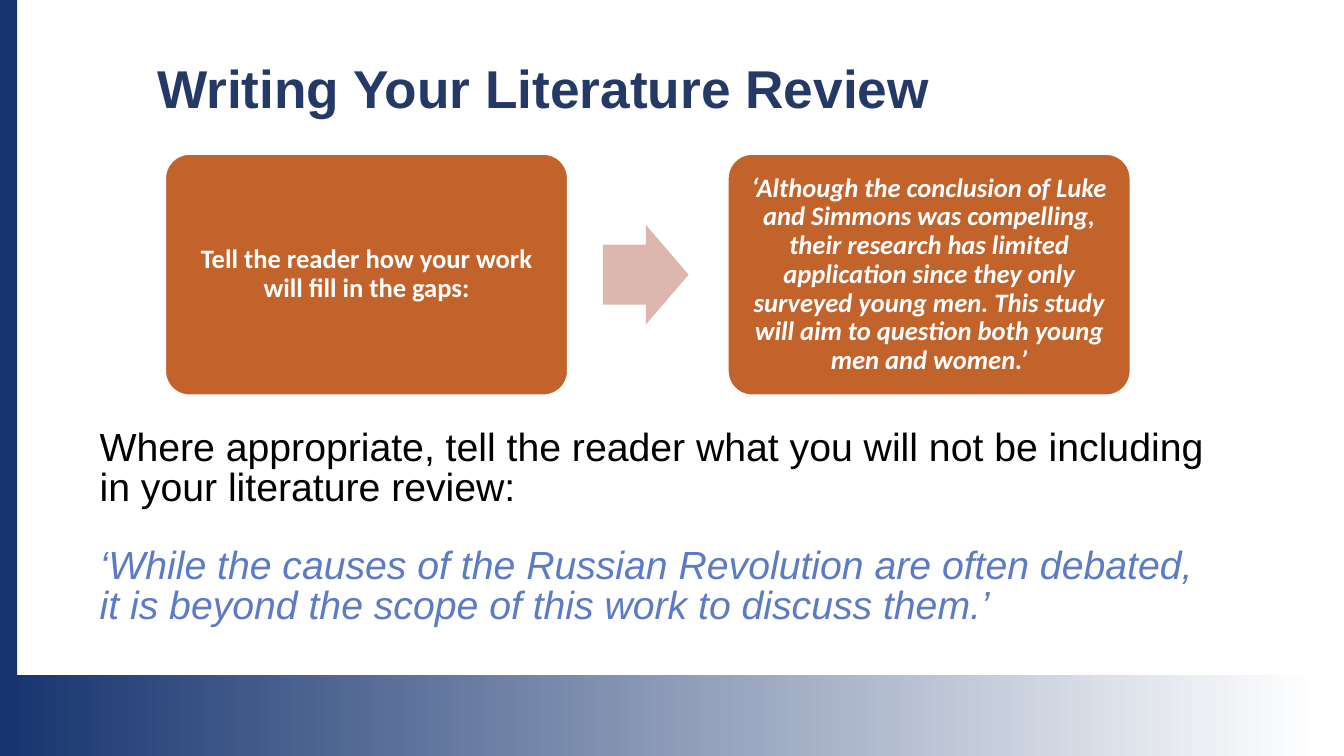
import dataclasses

import pptx
import pptx.dml.color
import pptx.enum.shapes
import pptx.enum.text
import pptx.util

SHAPES = pptx.enum.shapes.MSO_SHAPE
ALIGN = pptx.enum.text.PP_ALIGN
ANCHOR = pptx.enum.text.MSO_ANCHOR
EMU_PER_PX = 9144  # 100 px to the inch


@dataclasses.dataclass(frozen=True)
class Theme:
    navy: str = "16346F"
    title: str = "253967"
    quote: str = "5C7BC4"
    card: str = "C2632C"
    arrow: str = "DDB7AD"
    black: str = "000000"
    white: str = "FFFFFF"
    title_size: int = 38
    body_size: int = 28
    card_size: int = 19
    body_font: str = "Arial"
    card_font: str = "Calibri"


def px(length):
    return pptx.util.Emu(length * EMU_PER_PX)


def rgb(colour):
    return pptx.dml.color.RGBColor.from_string(colour)


def write(para, text, *, font, size, colour, bold=False, italic=False,
          align=ALIGN.LEFT, spacing=0.9, before=0):
    para.alignment = align
    para.line_spacing = spacing
    para.space_before = pptx.util.Pt(before)
    span = para.add_run()
    span.text = text
    span.font.name = font
    span.font.size = pptx.util.Pt(size)
    span.font.bold = bold
    span.font.italic = italic
    span.font.color.rgb = rgb(colour)


class SlideBuilder:
    def __init__(self, page, theme):
        self.page = page
        self.theme = theme

    def shape(self, kind, place, colour, adjustments=()):
        shape = self.page.shapes.add_shape(kind, *map(px, place))
        shape.shadow.inherit = False
        shape.fill.solid()
        shape.fill.fore_color.rgb = rgb(colour)
        shape.line.fill.background()
        for index, value in enumerate(adjustments):
            shape.adjustments[index] = value
        return shape

    def fading_band(self, place):
        band = self.shape(SHAPES.RECTANGLE, place, self.theme.navy)
        band.fill.gradient()
        band.fill.gradient_angle = 0
        stops = zip(band.fill.gradient_stops, (0, 0.98), (self.theme.navy, self.theme.white))
        for stop, position, colour in stops:
            stop.position = position
            stop.color.rgb = rgb(colour)

    def text(self, place):
        frame = self.page.shapes.add_textbox(*map(px, place)).text_frame
        frame.word_wrap = True
        return frame

    def card(self, place, text, italic=False):
        card = self.shape(SHAPES.ROUNDED_RECTANGLE, place, self.theme.card, [0.1])
        card.line.color.rgb = rgb(self.theme.white)
        card.line.width = pptx.util.Pt(1)
        frame = card.text_frame
        frame.word_wrap = True
        frame.vertical_anchor = ANCHOR.MIDDLE
        frame.margin_left = frame.margin_right = px(15)
        frame.margin_top = frame.margin_bottom = px(15)
        write(frame.paragraphs[0], text, font=self.theme.card_font, size=self.theme.card_size,
              colour=self.theme.white, bold=True, italic=italic, align=ALIGN.CENTER)


def main():
    deck = pptx.Presentation()
    deck.slide_width, deck.slide_height = px(1333), px(750)
    theme = Theme()
    slide = SlideBuilder(deck.slides.add_slide(deck.slide_layouts[6]), theme)

    # Frame: bottom band and left bar
    slide.fading_band((0, 670, 1333, 80))
    slide.shape(SHAPES.RECTANGLE, (0, 0, 17, 750), theme.navy)

    # Title
    title = slide.text((146, 57, 822, 96))
    write(title.paragraphs[0], "Writing Your Literature Review", font=theme.body_font,
          size=theme.title_size, colour=theme.title, bold=True)

    # Advice and its example, joined by an arrow
    slide.card((164, 153, 399, 239), "Tell the reader how your work will fill in the gaps:")
    slide.shape(SHAPES.RIGHT_ARROW, (598, 223, 85, 99), theme.arrow, [0.6, 0.5])
    slide.card((722, 153, 399, 239),
               "‘Although the conclusion of Luke and Simmons was compelling, their research has "
               "limited application since they only surveyed young men. This study will aim to "
               "question both young men and women.’", italic=True)

    # Scope advice and its example
    scope = slide.text((89, 421, 1117, 199))
    body = dict(font=theme.body_font, size=theme.body_size, spacing=0.85)
    write(scope.paragraphs[0], "Where appropriate, tell the reader what you will not be "
          "including in your literature review:", colour=theme.black, **body)
    write(scope.add_paragraph(), "‘While the causes of the Russian Revolution are often debated, "
          "it is beyond the scope of this work to discuss them.’",
          colour=theme.quote, italic=True, before=27, **body)

    deck.save("out.pptx")


if __name__ == "__main__":
    main()
